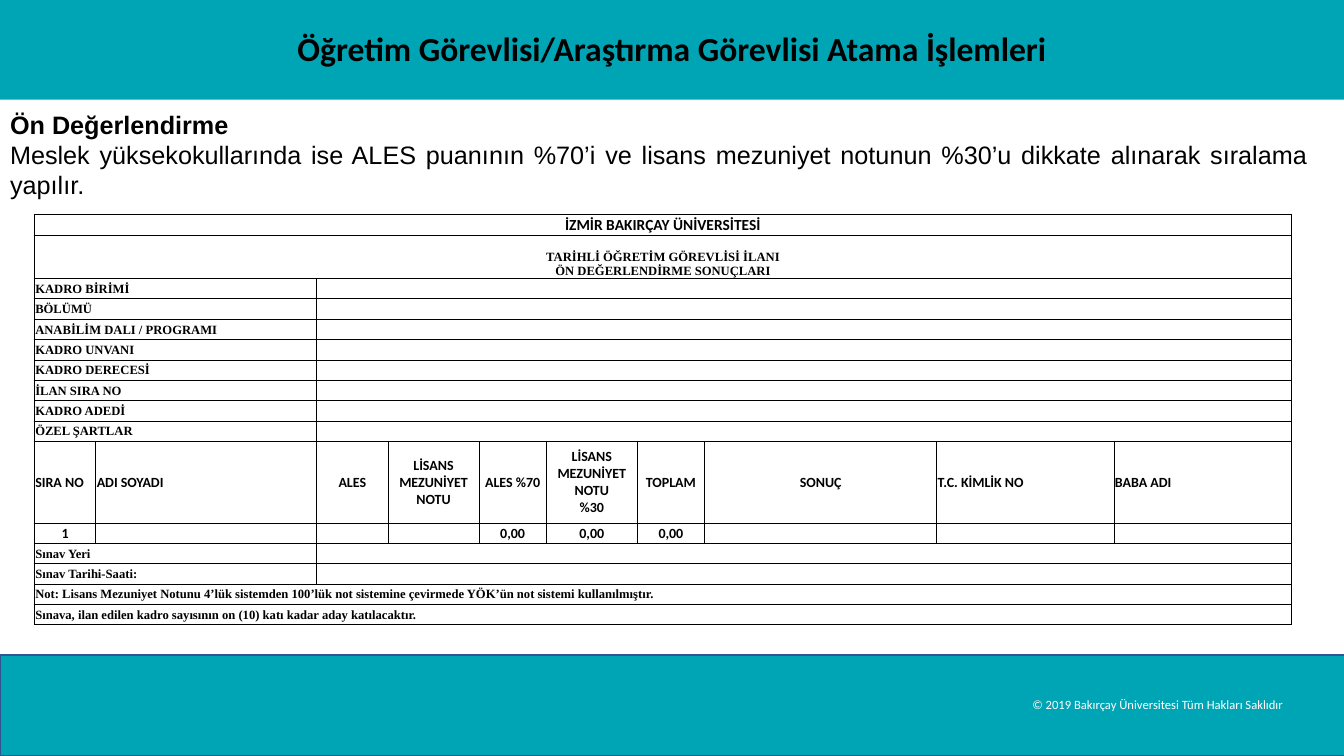
import pptx
import pptx.util
import pptx.dml.color
import pptx.enum.shapes
import pptx.enum.text
import pptx.oxml
import pptx.oxml.ns
from lxml import etree

Inches = pptx.util.Inches
Pt = pptx.util.Pt
qn = pptx.oxml.ns.qn
RGBColor = pptx.dml.color.RGBColor
ALIGN = pptx.enum.text.PP_ALIGN
ANCHOR = pptx.enum.text.MSO_ANCHOR

TEAL = RGBColor(0x00, 0xA5, 0xB5)
NAVY = RGBColor(0x32, 0x54, 0x91)
BLACK = RGBColor(0, 0, 0)
WHITE = RGBColor(0xFF, 0xFF, 0xFF)

SANS, SERIF = "Calibri", "Times New Roman"
COLUMNS = [0.61, 2.19, 0.71, 0.9, 0.67, 0.9, 0.67, 2.3, 1.76, 1.76]
HEADING_ROW, COLUMN_ROW = 1, 10
TALL_ROWS = {HEADING_ROW: 0.43, COLUMN_ROW: 0.81}
ROW_COUNT = 16
FIELDS = ["KADRO BİRİMİ", "BÖLÜMÜ", "ANABİLİM DALI / PROGRAMI", "KADRO UNVANI",
          "KADRO DERECESİ", "İLAN SIRA NO", "KADRO ADEDİ", "ÖZEL ŞARTLAR"]
EXAM_FIELDS = ["Sınav Yeri", "Sınav Tarihi-Saati:"]
NOTES = [
    "Not: Lisans Mezuniyet Notunu 4’lük sistemden 100’lük not sistemine çevirmede "
    "YÖK’ün not sistemi kullanılmıştır.",
    "Sınava, ilan edilen kadro sayısının on (10) katı kadar aday katılacaktır.",
]
HEADERS = ["SIRA NO", "ADI SOYADI", "ALES", "LİSANS MEZUNİYET NOTU", "ALES %70",
           "LİSANS MEZUNİYET NOTU\n%30", "TOPLAM", "SONUÇ", "T.C. KİMLİK NO", "BABA ADI"]
LEFT_HEADERS = {0, 1, 8, 9}
CANDIDATE = {0: "1", 4: "0,00", 5: "0,00", 6: "0,00"}


def place(sp, x, y, w, h):
    sp.left, sp.top, sp.width, sp.height = Inches(x), Inches(y), Inches(w), Inches(h)


def add_run(p, text, size, font, color=BLACK, bold=False):
    r = p.add_run()
    r.text = text
    r.font.size, r.font.name, r.font.bold = Pt(size), font, bold
    r.font.color.rgb = color


def add_band(s, x, y, w, h, line=None):
    sp = s.shapes.add_shape(pptx.enum.shapes.MSO_SHAPE.RECTANGLE,
                            Inches(x), Inches(y), Inches(w), Inches(h))
    sp.shadow.inherit = False
    sp.fill.solid()
    sp.fill.fore_color.rgb = TEAL
    if line:
        sp.line.color.rgb = line
        sp.line.width = Pt(1)
    else:
        sp.line.fill.background()
    return sp


def add_header(s, x, y, w, h):
    title = s.shapes.title
    title.element.addprevious(add_band(s, x, y, w, h).element)
    place(title, x, y + 0.24, 13.33, 0.5)
    tf = title.text_frame
    tf.auto_size = pptx.enum.text.MSO_AUTO_SIZE.NONE
    tf.vertical_anchor = ANCHOR.MIDDLE
    p = tf.paragraphs[0]
    p.alignment = ALIGN.CENTER
    add_run(p, "Öğretim Görevlisi/Araştırma Görevlisi Atama İşlemleri", 24, SANS, bold=True)


def add_footer(s, x, y, w, h):
    add_band(s, x, y, w, h, NAVY)
    sp = s.shapes.add_textbox(Inches(x + 9.14), Inches(y + 0.38), Inches(3.74), Inches(0.24))
    tf = sp.text_frame
    tf.word_wrap = False
    p = tf.paragraphs[0]
    p.line_spacing = 0.9
    p._p.get_or_add_pPr().set("marL", str(Inches(1)))
    add_run(p, "© 2019 Bakırçay Üniversitesi Tüm Hakları Saklıdır", 9, SANS, WHITE)


def add_body(s, x, y, w, h):
    sp = s.placeholders[1]
    place(sp, x, y, w, h)
    tf = sp.text_frame
    tf.auto_size = pptx.enum.text.MSO_AUTO_SIZE.NONE
    tf.vertical_anchor = ANCHOR.TOP
    texts = [
        ("Ön Değerlendirme", True),
        ("Meslek yüksekokullarında ise ALES puanının %70’i ve lisans mezuniyet notunun "
         "%30’u dikkate alınarak sıralama yapılır.", False),
    ]
    for i, (text, bold) in enumerate(texts):
        p = tf.add_paragraph() if i else tf.paragraphs[0]
        pPr = p._p.get_or_add_pPr()
        pPr.set("marL", "0")
        pPr.set("indent", "0")
        etree.SubElement(pPr, qn("a:buNone"))
        p.alignment = ALIGN.JUSTIFY
        p.space_before = Pt(0)
        p.line_spacing = 1.0
        add_run(p, text, 18, "Arial", bold=bold)


def format_cell(cell):
    cell.margin_left = cell.margin_top = cell.margin_right = Inches(0.01)
    cell.margin_bottom = 0
    cell.vertical_anchor = ANCHOR.MIDDLE
    tcPr = cell._tc.get_or_add_tcPr()
    for side in ("lnL", "lnR", "lnT", "lnB"):
        ln = etree.SubElement(tcPr, qn("a:" + side), w=str(Pt(0.5)))
        fill = etree.SubElement(ln, qn("a:solidFill"))
        etree.SubElement(fill, qn("a:srgbClr"), val=str(BLACK))
    cell.fill.background()
    etree.SubElement(cell.text_frame.paragraphs[0]._p, qn("a:endParaRPr"), sz="900")


def fill_cell(cell, text, size, font, align=ALIGN.LEFT):
    p = cell.text_frame.paragraphs[0]
    p.alignment = align
    for i, line in enumerate(text.split("\n")):
        if i:
            p.add_line_break()
        add_run(p, line, size, font, bold=True)


def add_results_table(s, x, y, w, h):
    table = s.shapes.add_table(ROW_COUNT, len(COLUMNS), Inches(x), Inches(y),
                               Inches(w), Inches(h)).table
    table.first_row = table.horz_banding = False
    for column, width in zip(table.columns, COLUMNS):
        column.width = Inches(width)
    low = (h - sum(TALL_ROWS.values())) / (ROW_COUNT - len(TALL_ROWS))
    for i, row in enumerate(table.rows):
        row.height = Inches(TALL_ROWS.get(i, low))
    for cell in table.iter_cells():
        format_cell(cell)

    last = len(COLUMNS) - 1
    full_rows = {
        0: ("İZMİR BAKIRÇAY ÜNİVERSİTESİ", 11, SANS, ALIGN.CENTER),
        HEADING_ROW: ("TARİHLİ ÖĞRETİM GÖREVLİSİ İLANI\nÖN DEĞERLENDİRME SONUÇLARI",
                      9, SERIF, ALIGN.CENTER),
    }
    for i, note in enumerate(NOTES, ROW_COUNT - len(NOTES)):
        full_rows[i] = (note, 9, SERIF)
    for i, content in full_rows.items():
        table.cell(i, 0).merge(table.cell(i, last))
        fill_cell(table.cell(i, 0), *content)
    table.cell(HEADING_ROW, 0).vertical_anchor = ANCHOR.BOTTOM

    for start, labels in ((HEADING_ROW + 1, FIELDS), (COLUMN_ROW + 2, EXAM_FIELDS)):
        for i, label in enumerate(labels, start):
            table.cell(i, 0).merge(table.cell(i, 1))
            table.cell(i, 2).merge(table.cell(i, last))
            fill_cell(table.cell(i, 0), label, 9, SERIF)

    for j, header in enumerate(HEADERS):
        align = ALIGN.LEFT if j in LEFT_HEADERS else ALIGN.CENTER
        fill_cell(table.cell(COLUMN_ROW, j), header, 10, SANS, align)
    for j, value in CANDIDATE.items():
        fill_cell(table.cell(COLUMN_ROW + 1, j), value, 10, SANS, ALIGN.CENTER)


def main():
    prs = pptx.Presentation()
    prs.slide_width, prs.slide_height = Inches(13.33), Inches(7.5)
    s = prs.slides.add_slide(prs.slide_layouts[1])
    add_header(s, 0, -0.01, 13.35, 1)
    add_footer(s, 0, 6.5, 13.35, 1)
    add_body(s, 0, 1.03, 13.07, 1.1)
    add_results_table(s, 0.34, 2.13, 12.47, 4.07)
    prs.save("out.pptx")


if __name__ == "__main__":
    main()
